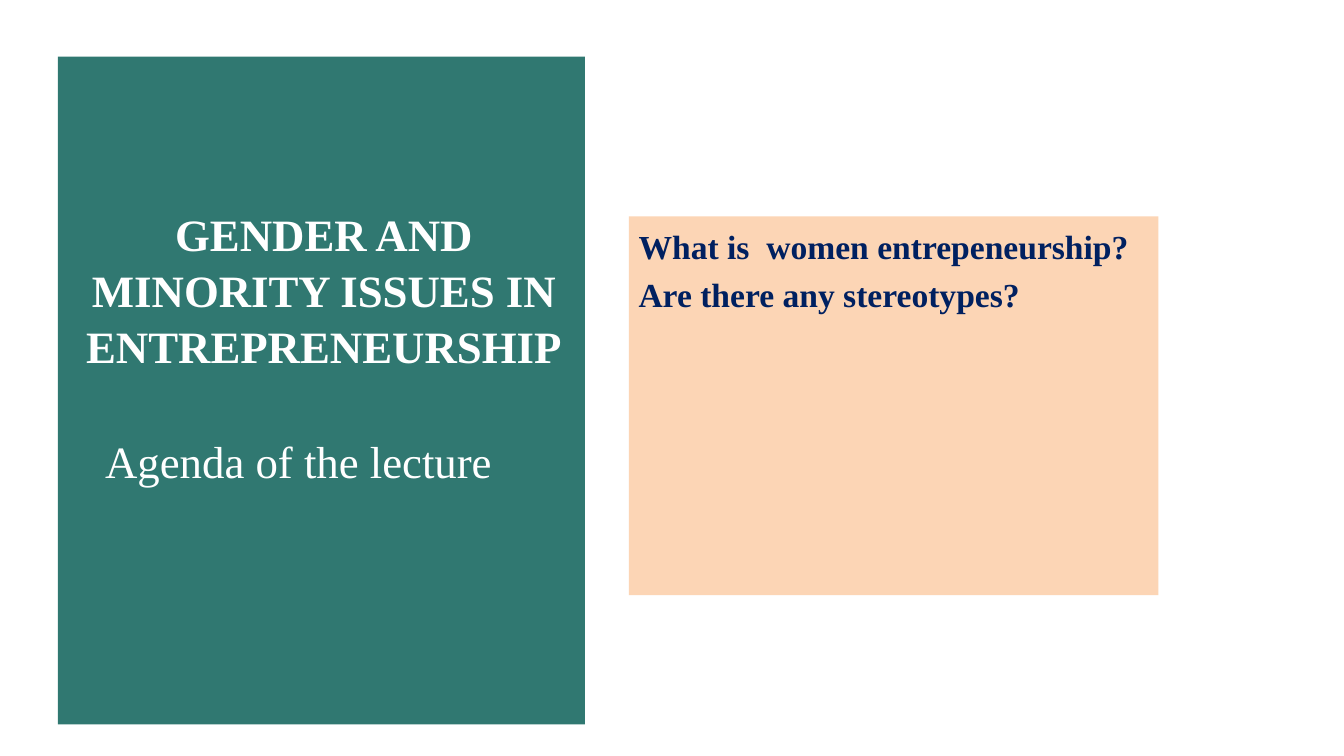
from pptx import Presentation
from pptx.dml.color import RGBColor
from pptx.enum.shapes import MSO_SHAPE as Kind
from pptx.enum.text import MSO_ANCHOR as Anchor, PP_ALIGN as Align
from pptx.util import Pt

# Content
TITLE = ["GENDER AND MINORITY ISSUES IN ENTREPRENEURSHIP"]
AGENDA = ["Agenda of the lecture"]
TOPICS = ["What is  women entrepeneurship?", "Are there any stereotypes?"]

# Style: boxes are left, top, width, height in points
FONT = "Times New Roman"
TEAL, PEACH, NAVY, WHITE = "307871", "FCD5B5", "002060", "FFFFFF"
PANEL = (31, 30.3, 282.3, 357.8)
CARD = (336.9, 115.9, 283.7, 203)
HEAD = (39.6, 106.5, 267.8, 97)
SUB = (51.1, 229.3, 231.8, 34.6)


def color(code):
    return RGBColor.from_string(code)


def block(slide, box, fill):
    shape = slide.shapes.add_shape(Kind.RECTANGLE, *map(Pt, box))
    shape.shadow.inherit = False
    shape.fill.solid()
    shape.fill.fore_color.rgb = color(fill)
    shape.line.fill.background()
    return shape


def write(shape, lines, size=24, ink=WHITE, bold=False, align=Align.LEFT,
          gap=0, top=3, pitch=1.0):
    frame = shape.text_frame
    frame.word_wrap = True
    frame.vertical_anchor = Anchor.TOP
    frame.margin_left = frame.margin_right = Pt(5.2)
    frame.margin_top, frame.margin_bottom = Pt(top), Pt(3)
    for i, line in enumerate(lines):
        para = frame.add_paragraph() if i else frame.paragraphs[0]
        para.alignment = align
        para.line_spacing = pitch
        para.space_before = Pt(gap if i else 0)
        run = para.add_run()
        run.text = line
        font = run.font
        font.name, font.size, font.bold = FONT, Pt(size), bold
        font.color.rgb = color(ink)


deck = Presentation()
deck.slide_width, deck.slide_height = Pt(720), Pt(405)
slide = deck.slides.add_slide(deck.slide_layouts[6])

# Left panel with title and subtitle
block(slide, PANEL, TEAL)
head = slide.shapes.add_textbox(*map(Pt, HEAD))
write(head, TITLE, bold=True, align=Align.CENTER, pitch=1.04)
sub = slide.shapes.add_textbox(*map(Pt, SUB))
write(sub, AGENDA)

# Topics card
card = block(slide, CARD, PEACH)
write(card, TOPICS, size=18, ink=NAVY, bold=True, gap=4.3, top=5)

deck.save("out.pptx")
